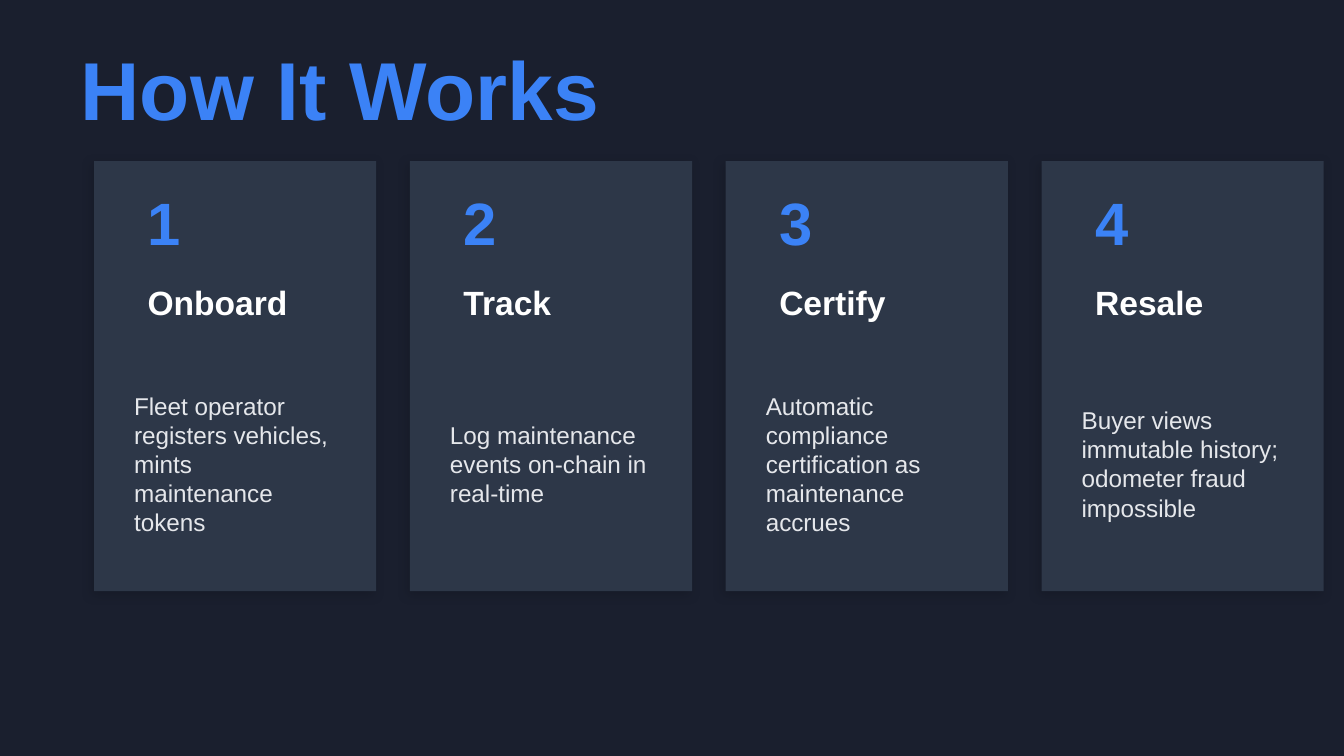
from dataclasses import dataclass

from lxml.etree import SubElement
from pptx import Presentation
from pptx.dml.color import RGBColor
from pptx.enum.shapes import MSO_SHAPE
from pptx.enum.text import MSO_ANCHOR, MSO_AUTO_SIZE, PP_ALIGN
from pptx.oxml.ns import qn
from pptx.shapes.autoshape import Shape
from pptx.slide import Slide
from pptx.util import Inches, Pt

NIGHT = RGBColor(0x1A, 0x1F, 0x2E)
SLATE = RGBColor(0x2D, 0x37, 0x48)
BLUE = RGBColor(0x3B, 0x82, 0xF6)
WHITE = RGBColor(0xFF, 0xFF, 0xFF)
LIGHT_GRAY = RGBColor(0xE5, 0xE7, 0xEB)

SLIDE_WIDTH = Inches(10)
SLIDE_HEIGHT = SLIDE_WIDTH * 9 // 16

FIRST_CARD_LEFT = 0.7
CARD_TOP = 1.2
CARD_WIDTH = 2.1
CARD_HEIGHT = 3.2
CARD_GAP = 0.25


@dataclass(frozen=True)
class Step:
    name: str
    description: str


@dataclass(frozen=True)
class TextStyle:
    size: int
    color: RGBColor
    bold: bool = False


TITLE_STYLE = TextStyle(44, BLUE, True)
NUMBER_STYLE = TextStyle(32, BLUE, True)
NAME_STYLE = TextStyle(18, WHITE, True)
DESCRIPTION_STYLE = TextStyle(13, LIGHT_GRAY)

STEPS = [
    Step("Onboard", "Fleet operator registers vehicles, mints maintenance tokens"),
    Step("Track", "Log maintenance events on-chain in real-time"),
    Step("Certify", "Automatic compliance certification as maintenance accrues"),
    Step("Resale", "Buyer views immutable history; odometer fraud impossible"),
]


def write_text(box: Shape, text: str, style: TextStyle) -> None:
    frame = box.text_frame
    frame.text = text
    frame.word_wrap = True
    frame.auto_size = MSO_AUTO_SIZE.NONE
    frame.vertical_anchor = MSO_ANCHOR.MIDDLE
    para = frame.paragraphs[0]
    para.alignment = PP_ALIGN.LEFT
    font = para.runs[0].font
    font.name = "Arial"
    font.size = Pt(style.size)
    font.bold = style.bold
    font.color.rgb = style.color


def add_text(page: Slide, left: float, top: float, width: float, height: float,
             text: str, style: TextStyle) -> None:
    box = page.shapes.add_textbox(Inches(left), Inches(top), Inches(width), Inches(height))
    write_text(box, text, style)


def add_soft_shadow(shape: Shape) -> None:
    shape.shadow.inherit = False
    effects = shape._element.spPr.find(qn("a:effectLst"))
    shadow = SubElement(effects, qn("a:outerShdw"), blurRad=str(Pt(6)), dist=str(Pt(2)),
                        dir=str(135 * 60000), algn="bl", rotWithShape="0")
    color = SubElement(shadow, qn("a:srgbClr"), val="000000")
    SubElement(color, qn("a:alpha"), val="15000")


def add_title(page: Slide, text: str) -> None:
    title = page.shapes.title
    title.left, title.top = Inches(0.5), Inches(0.4)
    title.width, title.height = Inches(9), Inches(0.5)
    write_text(title, text, TITLE_STYLE)


def add_step_card(page: Slide, index: int, step: Step) -> None:
    left = FIRST_CARD_LEFT + index * (CARD_WIDTH + CARD_GAP)
    card = page.shapes.add_shape(MSO_SHAPE.RECTANGLE, Inches(left), Inches(CARD_TOP),
                                 Inches(CARD_WIDTH), Inches(CARD_HEIGHT))
    card.fill.solid()
    card.fill.fore_color.rgb = SLATE
    card.line.fill.background()
    add_soft_shadow(card)
    add_text(page, left + 0.3, CARD_TOP + 0.2, 1.5, 0.5, str(index + 1), NUMBER_STYLE)
    add_text(page, left + 0.3, CARD_TOP + 0.8, 1.5, 0.5, step.name, NAME_STYLE)
    add_text(page, left + 0.2, CARD_TOP + 1.5, 1.7, 1.5, step.description, DESCRIPTION_STYLE)


def main() -> None:
    deck = Presentation()
    deck.slide_width, deck.slide_height = SLIDE_WIDTH, SLIDE_HEIGHT
    page = deck.slides.add_slide(deck.slide_layouts.get_by_name("Title Only"))
    page.background.fill.solid()
    page.background.fill.fore_color.rgb = NIGHT
    add_title(page, "How It Works")
    for index, step in enumerate(STEPS):
        add_step_card(page, index, step)
    deck.save("out.pptx")


if __name__ == "__main__":
    main()
